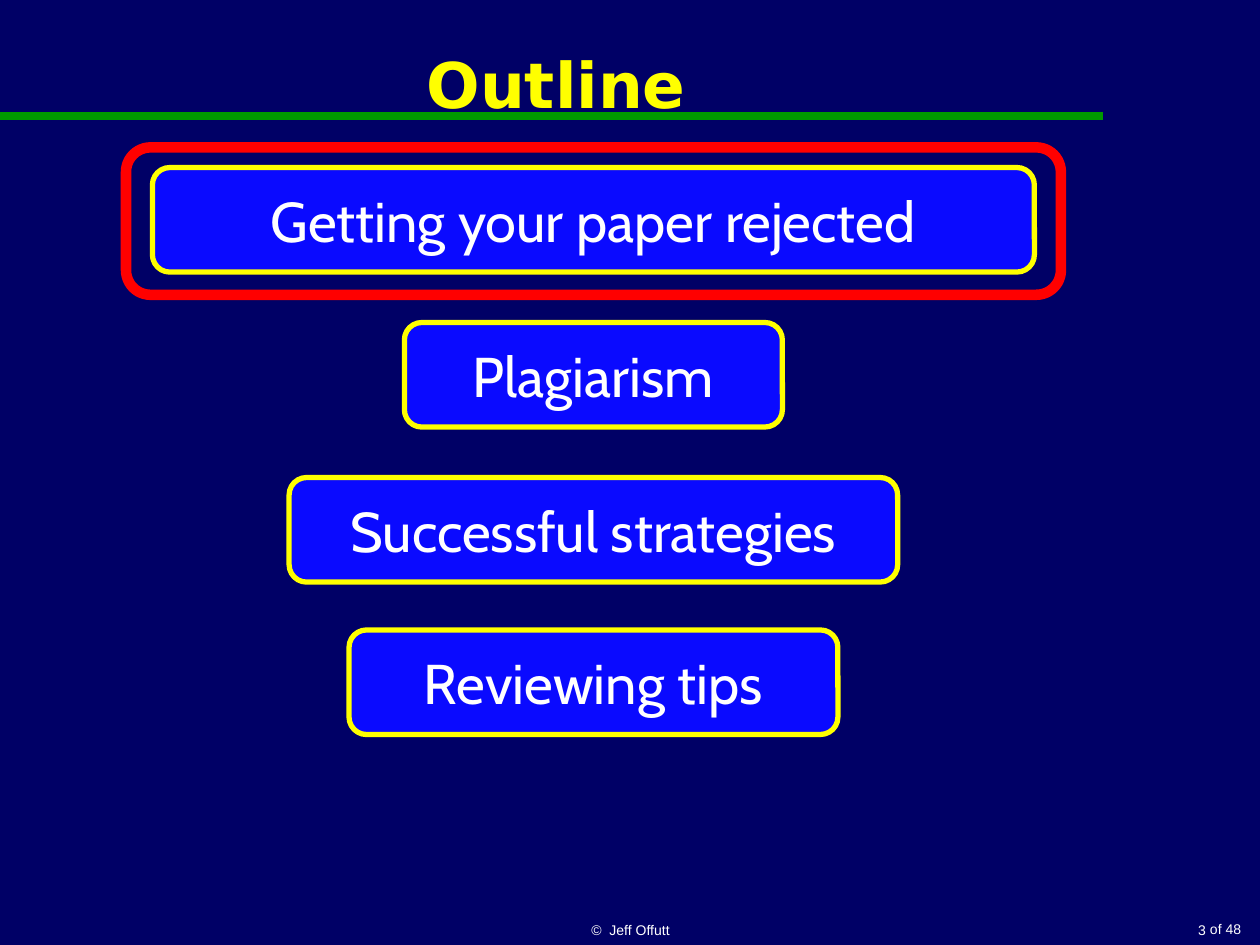
"""Build an outline slide with four topic boxes, the first one framed."""
from typing import NamedTuple

from lxml.etree import SubElement
from pptx import Presentation
from pptx.dml.color import RGBColor
from pptx.enum.shapes import MSO_CONNECTOR, MSO_SHAPE
from pptx.enum.text import MSO_ANCHOR, PP_ALIGN
from pptx.oxml.ns import qn
from pptx.util import Inches, Pt

NAVY = RGBColor(0x00, 0x00, 0x66)
GREEN = RGBColor(0x00, 0x99, 0x00)
YELLOW = RGBColor(0xFF, 0xFF, 0x00)
BLUE = RGBColor(0x0A, 0x0A, 0xFF)
RED = RGBColor(0xFF, 0x00, 0x00)
WHITE = RGBColor(0xFF, 0xFF, 0xFF)
MID = 4.71


class Style(NamedTuple):
    font: str
    size: float
    color: RGBColor
    bold: bool = False


class Label(NamedTuple):
    text: str
    left: float
    top: float
    width: float
    height: float
    style: Style
    align: PP_ALIGN
    anchor: MSO_ANCHOR
    wrap: bool = True


class Topic(NamedTuple):
    text: str
    top: float
    width: float


HEAD = Style("DejaVu Sans", 36, YELLOW, True)
BODY = Style("Cabin", 32, WHITE)
FOOT = Style("Arial", 8, WHITE)

LABELS = [
    Label("of 48", 9.5, 7.26, 0.45, 0.24, FOOT, PP_ALIGN.RIGHT, MSO_ANCHOR.TOP, False),
    Label("Outline", 0.08, 0, 8.67, 1.33, HEAD, PP_ALIGN.CENTER, MSO_ANCHOR.MIDDLE),
    Label("©  Jeff Offutt", 3.42, 7.17, 3.17, 0.33, FOOT, PP_ALIGN.CENTER, MSO_ANCHOR.BOTTOM),
    Label("3", 7.92, 7.17, 1.75, 0.33, FOOT, PP_ALIGN.RIGHT, MSO_ANCHOR.BOTTOM),
]
TOPICS = [
    Topic("Getting your paper rejected", 1.33, 7),
    Topic("Plagiarism", 2.56, 3),
    Topic("Successful strategies", 3.79, 4.83),
    Topic("Reviewing tips", 5, 3.88),
]


def write(shape, text: str, style: Style, align: PP_ALIGN, anchor: MSO_ANCHOR) -> None:
    frame = shape.text_frame
    frame.text = text
    frame.vertical_anchor = anchor
    line = frame.paragraphs[0]
    line.alignment = align
    font = line.runs[0].font
    font.name = style.font
    font.size = Pt(style.size)
    font.bold = style.bold
    font.color.rgb = style.color


def add_label(slide, label: Label) -> None:
    box = slide.shapes.add_textbox(
        Inches(label.left), Inches(label.top), Inches(label.width), Inches(label.height)
    )
    box.text_frame.word_wrap = label.wrap
    write(box, label.text, label.style, label.align, label.anchor)


def add_frame(slide, top: float, width: float, height: float, color: RGBColor, weight: float):
    shape = slide.shapes.add_shape(
        MSO_SHAPE.ROUNDED_RECTANGLE,
        Inches(MID - width / 2), Inches(top), Inches(width), Inches(height),
    )
    shape.shadow.inherit = False
    shape.fill.background()
    shape.line.color.rgb = color
    shape.line.width = Pt(weight)
    return shape


def add_topic(slide, topic: Topic) -> None:
    box = add_frame(slide, topic.top, topic.width, 0.83, YELLOW, 3)
    box.fill.solid()
    box.fill.fore_color.rgb = BLUE
    write(box, topic.text, BODY, PP_ALIGN.CENTER, MSO_ANCHOR.MIDDLE)


def add_rule(slide) -> None:
    rule = slide.shapes.add_connector(
        MSO_CONNECTOR.STRAIGHT, Inches(0), Inches(0.92), Inches(8.75), Inches(0.92)
    )
    rule.line.color.rgb = GREEN
    rule.line.width = Pt(4.5)
    SubElement(rule.element.spPr, qn("a:effectLst"))


def main() -> None:
    deck = Presentation()
    deck.slide_width, deck.slide_height = Inches(10), Inches(7.5)
    slide = deck.slides.add_slide(deck.slide_layouts[6])
    slide.background.fill.solid()
    slide.background.fill.fore_color.rgb = NAVY
    add_rule(slide)
    for label in LABELS:
        add_label(slide, label)
    for topic in TOPICS:
        add_topic(slide, topic)
    add_frame(slide, 1.17, 7.42, 1.17, RED, 6)
    deck.save("out.pptx")


if __name__ == "__main__":
    main()
